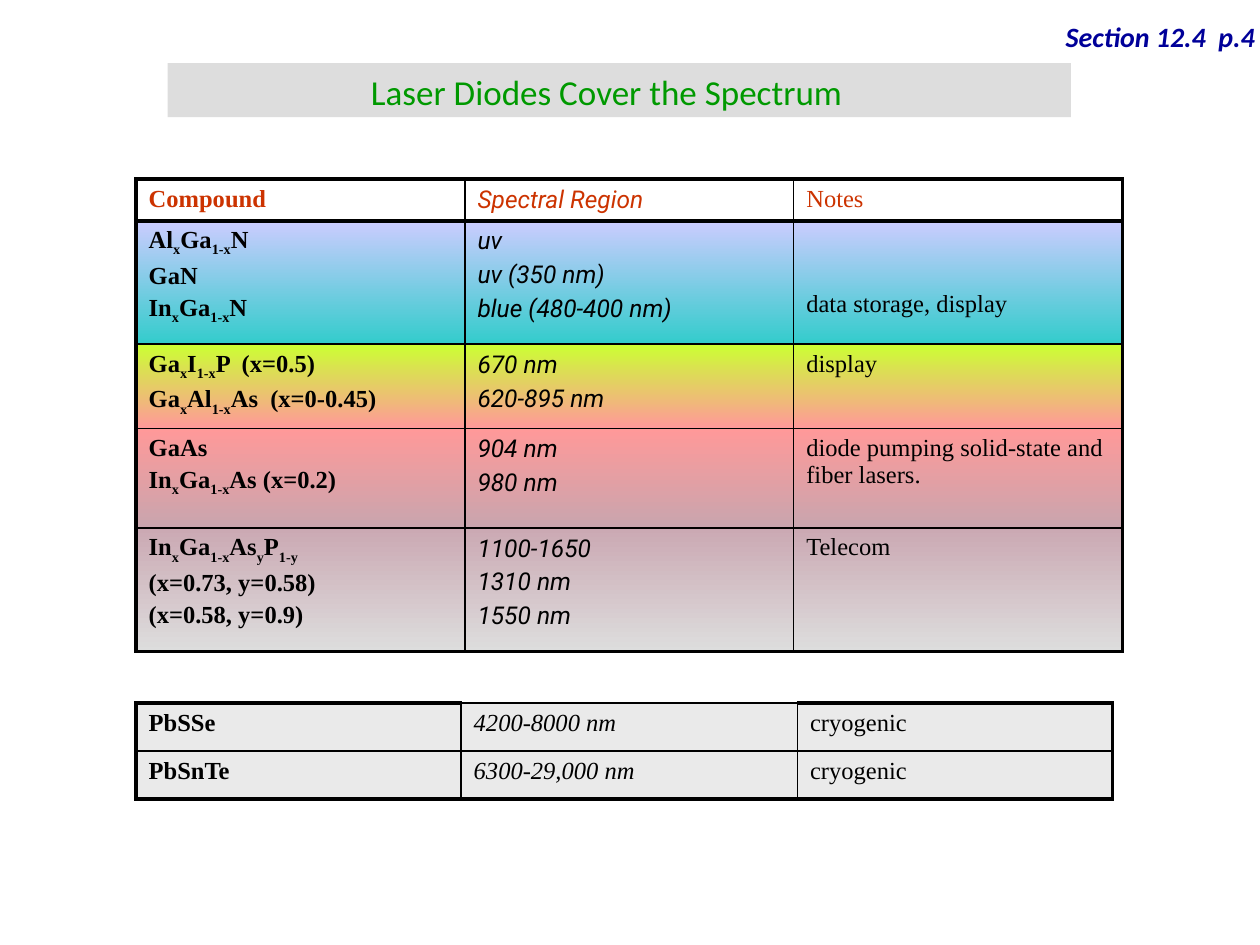
import lxml.etree
import pptx
import pptx.dml.color
import pptx.enum.text
import pptx.oxml.ns
import pptx.util

Inches = pptx.util.Inches
Pt = pptx.util.Pt
RGBColor = pptx.dml.color.RGBColor

BLACK = RGBColor(0x00, 0x00, 0x00)
GREEN = RGBColor(0x00, 0x99, 0x00)
NAVY = RGBColor(0x00, 0x00, 0x99)
RUST = RGBColor(0xCC, 0x33, 0x00)
SILVER = RGBColor(0xDD, 0xDD, 0xDD)
PALE_GRAY = RGBColor(0xEA, 0xEA, 0xEA)
LAVENDER = RGBColor(0xCC, 0xCC, 0xFF)
TURQUOISE = RGBColor(0x33, 0xCC, 0xCC)
LIME = RGBColor(0xCC, 0xFF, 0x33)
SALMON = RGBColor(0xFF, 0x99, 0x99)
MAUVE = RGBColor(0xC9, 0xA5, 0xAE)
LIGHT_MAUVE = RGBColor(0xCB, 0xA9, 0xB3)

SERIF = "Times New Roman"
THICK, THIN = 2.25, 1
TABLE_LEFT = 1.08
SPECTRUM_COLUMNS = [2.61] * 3

HEADER_ROWS = [(["Compound"], ["Spectral Region"], ["Notes"])]
SPECTRUM_ROWS = [
    (["Al{x}Ga{1-x}N", "GaN", "In{x}Ga{1-x}N"],
     ["uv", "uv (350 nm)", "blue (480-400 nm)"],
     ["data storage, display"]),
    (["Ga{x}I{1-x}P  (x=0.5)", "Ga{x}Al{1-x}As  (x=0-0.45)"],
     ["670 nm", "620-895 nm"],
     ["display"]),
    (["GaAs", "In{x}Ga{1-x}As (x=0.2)"],
     ["904 nm", "980 nm"],
     ["diode pumping solid-state and fiber lasers."]),
    (["In{x}Ga{1-x}As{y}P{1-y}", "(x=0.73, y=0.58)", "(x=0.58, y=0.9)"],
     ["1100-1650", "1310 nm", "1550 nm"],
     ["Telecom"]),
]
SPECTRUM_FILLS = [(LAVENDER, TURQUOISE), (LIME, SALMON),
                  (SALMON, MAUVE), (LIGHT_MAUVE, SILVER)]
CRYOGENIC_ROWS = [
    (["PbSSe"], ["4200-8000 nm"], ["cryogenic"]),
    (["PbSnTe"], ["6300-29,000 nm"], ["cryogenic"]),
]


def write_text(text_frame, lines, *, size=14, font=SERIF, color=BLACK,
               bold=False, italic=False, align=None, space_before=0):
    """Write one paragraph per line; parts in braces become subscripts."""
    for line_index, line in enumerate(lines):
        paragraph = (text_frame.add_paragraph() if line_index
                     else text_frame.paragraphs[0])
        paragraph.alignment = align
        paragraph.space_before = Pt(space_before)
        for part_index, part in enumerate(line.replace("}", "{").split("{")):
            if not part:
                continue
            run = paragraph.add_run()
            run.text = part
            run.font.size = Pt(size)
            run.font.name = font
            run.font.color.rgb = color
            run.font.bold = bold
            run.font.italic = italic
            if part_index % 2:
                run.font._element.set("baseline", "-25000")


def fill_cell(cell, colors):
    """Fill with nothing, one colour, or a gradient from top to bottom."""
    if not colors:
        cell.fill.background()
    elif len(colors) == 1:
        cell.fill.solid()
        cell.fill.fore_color.rgb = colors[0]
    else:
        cell.fill.gradient()
        cell.fill.gradient_angle = 270
        for stop, color in zip(cell.fill.gradient_stops, colors):
            stop.color.rgb = color


def set_borders(cell, widths):
    """Draw black borders; widths are left, right, top and bottom in points."""
    properties = cell._tc.get_or_add_tcPr()
    qualified = pptx.oxml.ns.qn
    for index, (side, width) in enumerate(zip("LRTB", widths)):
        line = lxml.etree.Element(qualified(f"a:ln{side}"), w=str(Pt(width)))
        fill = lxml.etree.SubElement(line, qualified("a:solidFill"))
        lxml.etree.SubElement(fill, qualified("a:srgbClr"), val=str(BLACK))
        properties.insert(index, line)


def add_table(slide, top, column_widths, row_heights, rows, fills,
              middle_font=SERIF, color=BLACK, middle_top=THICK):
    shape = slide.shapes.add_table(
        len(rows), len(column_widths), Inches(TABLE_LEFT), Inches(top),
        Inches(sum(column_widths)), Inches(sum(row_heights)))
    table = shape.table
    table.first_row = False
    table.horz_banding = False
    for column, width in zip(table.columns, column_widths):
        column.width = Inches(width)
    for row, height in zip(table.rows, row_heights):
        row.height = Inches(height)
    last_row, last_column = len(rows) - 1, len(column_widths) - 1
    for row_index, row in enumerate(rows):
        for column_index, lines in enumerate(row):
            cell = table.cell(row_index, column_index)
            middle = column_index == 1
            write_text(cell.text_frame, lines, color=color,
                       font=middle_font if middle else SERIF,
                       bold=column_index == 0, italic=middle,
                       space_before=2.8)
            fill_cell(cell, fills[row_index])
            outer_top = middle_top if middle else THICK
            set_borders(cell, [
                THICK if column_index == 0 else THIN,
                THICK if column_index == last_column else THIN,
                outer_top if row_index == 0 else THIN,
                THICK if row_index == last_row else THIN,
            ])
    return table


def add_title(slide, text):
    title = slide.shapes.title
    title.left, title.top = Inches(1.33), Inches(0.5)
    title.width, title.height = Inches(7.17), Inches(0.43)
    title.fill.solid()
    title.fill.fore_color.rgb = SILVER
    frame = title.text_frame
    frame.auto_size = pptx.enum.text.MSO_AUTO_SIZE.NONE
    frame.vertical_anchor = pptx.enum.text.MSO_ANCHOR.MIDDLE
    frame.margin_right = Inches(0.3)
    frame.margin_top = Inches(0.08)
    write_text(frame, [text], size=20, font="Calibri", color=GREEN,
               align=pptx.enum.text.PP_ALIGN.CENTER)


def add_section_label(slide, text):
    box = slide.shapes.add_textbox(Inches(8.36), Inches(0.11),
                                   Inches(1.72), Inches(0.37))
    box.text_frame.word_wrap = False
    write_text(box.text_frame, [text], size=16, font="Calibri", color=NAVY,
               bold=True, italic=True)


def main():
    presentation = pptx.Presentation()
    presentation.slide_width = Inches(10)
    presentation.slide_height = Inches(7.5)
    slide = presentation.slides.add_slide(presentation.slide_layouts[5])

    add_title(slide, "Laser Diodes Cover the Spectrum")
    spectrum = add_table(slide, 1.75, SPECTRUM_COLUMNS,
                         [0.98, 0.67, 0.79, 0.98], SPECTRUM_ROWS,
                         SPECTRUM_FILLS, middle_font="Roboto")
    # Lowers the note to the third compound's line.
    spectrum.cell(0, 2).margin_top = Inches(0.56)
    add_table(slide, 5.58, [2.58, 2.67, 2.5], [0.38] * 2, CRYOGENIC_ROWS,
              [(PALE_GRAY,)] * 2, middle_top=THIN)
    add_section_label(slide, "Section 12.4  p.4")
    add_table(slide, 1.42, SPECTRUM_COLUMNS, [0.33], HEADER_ROWS, [()],
              middle_font="Roboto", color=RUST)

    presentation.save("out.pptx")


if __name__ == "__main__":
    main()
